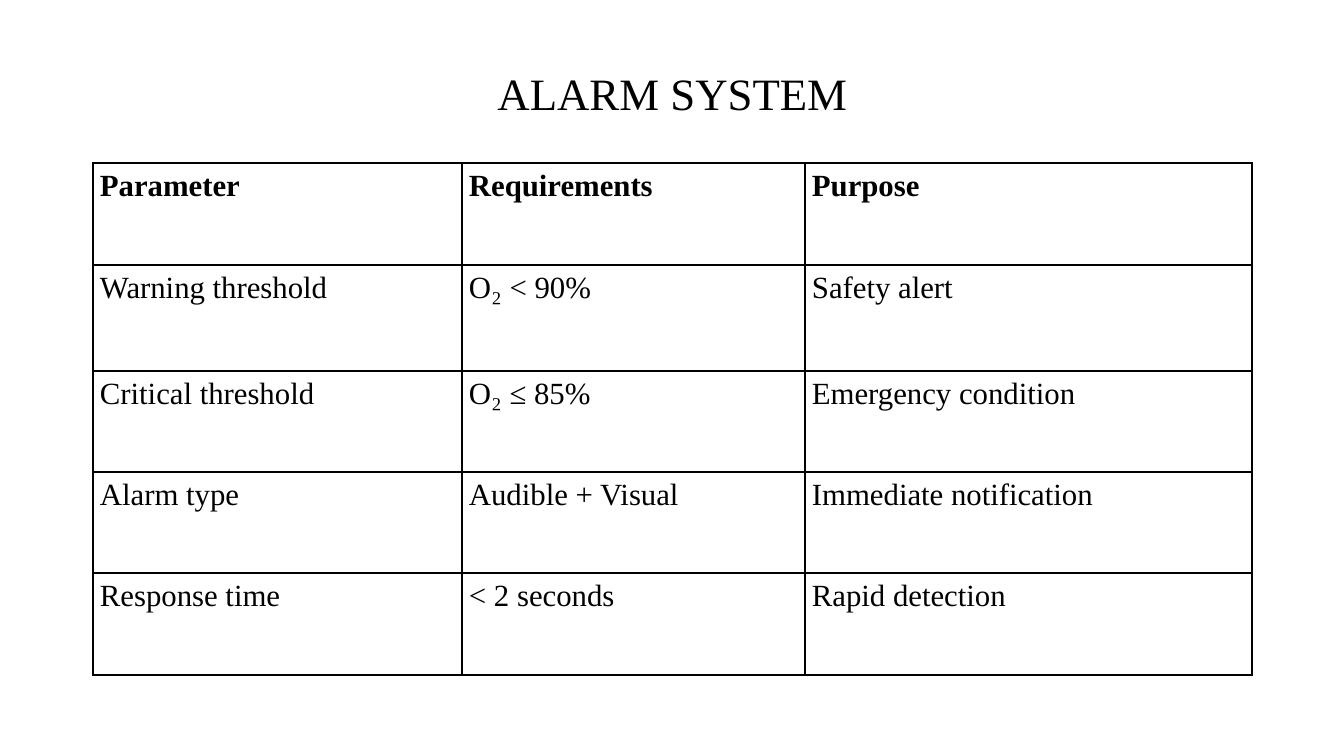
from lxml.etree import SubElement
from pptx import Presentation
from pptx.dml.color import RGBColor
from pptx.enum.text import MSO_ANCHOR as Anchor, PP_ALIGN as Align
from pptx.oxml.ns import qn
from pptx.util import Emu, Pt

TITLE = "ALARM SYSTEM"
ROWS = [
    ("Parameter", "Requirements", "Purpose"),
    ("Warning threshold", "O₂ < 90%", "Safety alert"),
    ("Critical threshold", "O₂ ≤ 85%", "Emergency condition"),
    ("Alarm type", "Audible + Visual", "Immediate notification"),
    ("Response time", "< 2 seconds", "Rapid detection"),
]
COLUMN_WIDTHS = (369, 343, 447)
ROW_HEIGHTS = (102, 106, 101, 101, 102)

SLIDE_WIDTH, SLIDE_HEIGHT = 1344, 756
LEFT, TITLE_TOP, TITLE_HEIGHT, TABLE_TOP = 93, 40, 112, 163
FONT = "Times New Roman"
BLACK = RGBColor(0, 0, 0)
BORDER_WIDTH = Pt(1)


def px(length):
    return Emu(round(length * 914400 / 100.8))


def style_paragraph(paragraph, size, line_spacing, bold=False):
    paragraph.line_spacing = line_spacing
    font = paragraph.font
    font.name, font.size, font.bold = FONT, Pt(size), bold
    font.color.rgb = BLACK


def add_borders(cell):
    properties = cell._tc.get_or_add_tcPr()
    for side in ("lnL", "lnR", "lnT", "lnB"):
        line = SubElement(properties, qn(f"a:{side}"), w=str(BORDER_WIDTH))
        fill = SubElement(line, qn("a:solidFill"))
        SubElement(fill, qn("a:srgbClr"), val=str(BLACK))


def add_title(slide):
    box = slide.shapes.add_textbox(
        px(LEFT), px(TITLE_TOP), px(sum(COLUMN_WIDTHS)), px(TITLE_HEIGHT))
    frame = box.text_frame
    frame.word_wrap = True
    frame.vertical_anchor = Anchor.MIDDLE
    frame.text = TITLE
    paragraph = frame.paragraphs[0]
    paragraph.alignment = Align.CENTER
    style_paragraph(paragraph, 32, 0.9)


def fill_cell(cell, text, bold):
    cell.margin_left, cell.margin_top = px(7), px(4)
    cell.margin_right, cell.margin_bottom = px(8), px(0)
    cell.text = text
    paragraph = cell.text_frame.paragraphs[0]
    paragraph.space_after = Pt(10.8)
    style_paragraph(paragraph, 22, 1.07, bold)
    add_borders(cell)
    cell.fill.background()


def add_alarm_table(slide):
    table = slide.shapes.add_table(
        len(ROWS), len(COLUMN_WIDTHS), px(LEFT), px(TABLE_TOP),
        px(sum(COLUMN_WIDTHS)), px(sum(ROW_HEIGHTS))).table
    table.first_row = table.horz_banding = False
    for column, width in zip(table.columns, COLUMN_WIDTHS):
        column.width = px(width)
    for row, height in zip(table.rows, ROW_HEIGHTS):
        row.height = px(height)
    for row_index, texts in enumerate(ROWS):
        for column_index, text in enumerate(texts):
            fill_cell(table.cell(row_index, column_index), text, row_index == 0)


def main():
    presentation = Presentation()
    presentation.slide_width = px(SLIDE_WIDTH)
    presentation.slide_height = px(SLIDE_HEIGHT)
    slide = presentation.slides.add_slide(presentation.slide_layouts[6])
    add_title(slide)
    add_alarm_table(slide)
    presentation.save("out.pptx")


if __name__ == "__main__":
    main()
